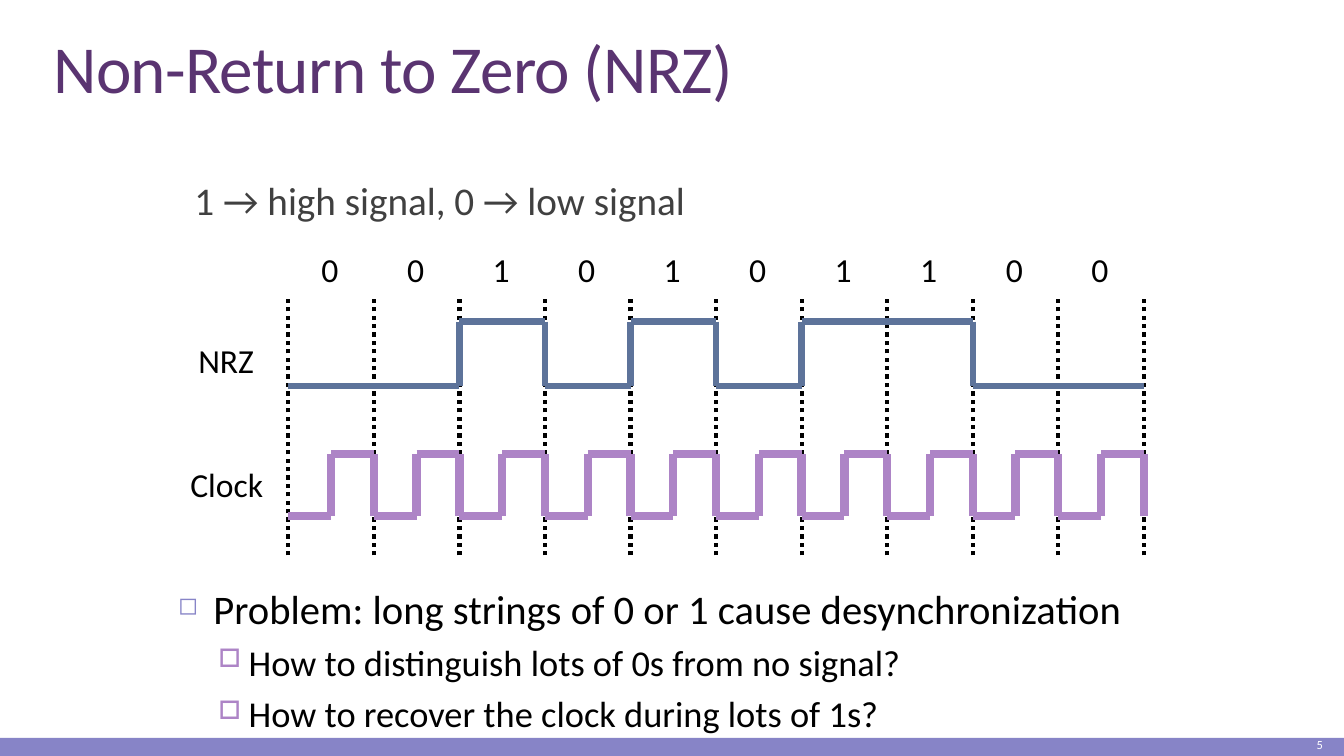
from itertools import groupby, pairwise

from pptx import Presentation
from pptx.dml.color import RGBColor
from pptx.enum import dml, shapes, text
from pptx.oxml import ns, xmlchemy
from pptx.util import Pt

FONT = "Calibri"
BLACK = RGBColor(0, 0, 0)
WHITE = RGBColor(255, 255, 255)
GRAY = RGBColor(0x40, 0x40, 0x40)
TITLE_PURPLE = RGBColor(0x5A, 0x34, 0x71)
PERIWINKLE = RGBColor(0x87, 0x84, 0xC7)
MAUVE = RGBColor(0xAD, 0x84, 0xC6)
SLATE = RGBColor(0x5D, 0x73, 0x9A)

BITS = "0010101100"
LEFT, STEP = 206, 61.1
GRID_TOP, GRID_BOTTOM = 211, 396.7
NRZ_HIGH, NRZ_LOW = 229.7, 275.8
CLOCK_HIGH, CLOCK_LOW = 324.5, 368.5

PROBLEMS = [
    (0, "Problem: long strings of 0 or 1 cause desynchronization"),
    (1, "How to distinguish lots of 0s from no signal?"),
    (1, "How to recover the clock during lots of 1s?"),
]


def add_run(p, content, size, color):
    r = p.add_run()
    r.text = content
    r.font.name = FONT
    r.font.size = Pt(size)
    r.font.color.rgb = color
    return r


def add_box(s, x, y, w, h, wrap=True):
    tf = s.shapes.add_textbox(Pt(x), Pt(y), Pt(w), Pt(h)).text_frame
    tf.word_wrap = wrap
    return tf


def add_label(s, content, x, y, w):
    tf = add_box(s, x, y, w, 36, wrap=False)
    add_run(tf.paragraphs[0], content, 24, BLACK)


def add_title(s, content):
    tf = add_box(s, 31, 22.3, 910, 57.6)
    tf.vertical_anchor = text.MSO_ANCHOR.BOTTOM
    p = tf.paragraphs[0]
    p.line_spacing = 0.85
    r = add_run(p, content, 48, TITLE_PURPLE)
    r.font._element.set("spc", "-50")


def add_rule(s, content):
    tf = add_box(s, 131.8, 126, 696, 48)
    p = tf.paragraphs[0]
    p.line_spacing = 0.9
    p.space_after = Pt(2)
    add_run(p, content, 28, GRAY)


def add_footer(s, number):
    sp = s.shapes.add_shape(shapes.MSO_SHAPE.RECTANGLE,
                            Pt(0), Pt(527), Pt(960), Pt(13))
    sp.shadow.inherit = False
    sp.fill.solid()
    sp.fill.fore_color.rgb = PERIWINKLE
    sp.line.fill.background()
    tf = add_box(s, 849, 524.2, 103, 15.8)
    tf.vertical_anchor = text.MSO_ANCHOR.MIDDLE
    p = tf.paragraphs[0]
    p.alignment = text.PP_ALIGN.RIGHT
    add_run(p, number, 8.9, WHITE)


def add_line(s, start, end, color, width):
    line = s.shapes.add_connector(shapes.MSO_CONNECTOR.STRAIGHT,
                                  *map(Pt, start + end))
    line.line.color.rgb = color
    line.line.width = Pt(width)
    xmlchemy.OxmlElement  # shared element factory
    line._element.spPr.append(xmlchemy.OxmlElement("a:effectLst"))
    return line


def add_trace(s, points, color, width):
    """Join successive points with straight lines."""
    for start, end in pairwise(points):
        add_line(s, start, end, color, width)


def edge(i):
    """Horizontal position of the start of bit i; halves are allowed."""
    return LEFT + i * STEP


def nrz_points():
    points, i = [], 0
    for bit, run in groupby(BITS):
        y = NRZ_HIGH if bit == "1" else NRZ_LOW
        n = len(list(run))
        points += [(edge(i), y), (edge(i + n), y)]
        i += n
    return points


def clock_points():
    points = [(edge(0), CLOCK_LOW)]
    for i in range(len(BITS)):
        middle, end = edge(i + 0.5), edge(i + 1)
        points += [(middle, CLOCK_LOW), (middle, CLOCK_HIGH),
                   (end, CLOCK_HIGH), (end, CLOCK_LOW)]
    return points


def set_bullet(p, char, color, percent, margin, hang):
    pPr = p._p.get_or_add_pPr()
    pPr.set("marL", str(Pt(margin)))
    pPr.set("indent", str(-Pt(hang)))
    clr = xmlchemy.OxmlElement("a:buClr")
    rgb = xmlchemy.OxmlElement("a:srgbClr")
    rgb.set("val", str(color))
    clr.append(rgb)
    size = xmlchemy.OxmlElement("a:buSzPct")
    size.set("val", str(percent * 1000))
    bullet = xmlchemy.OxmlElement("a:buChar")
    bullet.set("char", char)
    for element in (clr, size, bullet):
        pPr.append(element)


def add_problems(s):
    tf = add_box(s, 120.2, 413.3, 720, 126.7)
    for i, (level, content) in enumerate(PROBLEMS):
        p = tf.add_paragraph() if i else tf.paragraphs[0]
        p.level = level
        if i:
            p.space_before = Pt(5.5)
        if level:
            set_bullet(p, "□", MAUVE, 70, 50.4, 21.6)
        else:
            set_bullet(p, "◻", PERIWINKLE, 60, 25.2, 25.2)
        add_run(p, content, 26 if level else 29, BLACK)


def main():
    prs = Presentation()
    prs.slide_width, prs.slide_height = Pt(960), Pt(540)
    s = prs.slides.add_slide(prs.slide_layouts[6])
    add_footer(s, "5")
    add_title(s, "Non-Return to Zero (NRZ)")
    add_rule(s, "1 → high signal, 0 → low signal")
    for i in range(len(BITS) + 1):
        line = add_line(s, (edge(i), GRID_BOTTOM), (edge(i), GRID_TOP), BLACK, 3)
        line.line.dash_style = dml.MSO_LINE.ROUND_DOT
    add_trace(s, clock_points(), MAUVE, 6)
    add_label(s, "Clock", 128.9, 327.6, 67)
    add_label(s, "NRZ", 134.6, 239, 54.7)
    add_trace(s, nrz_points(), SLATE, 4.5)
    for i, bit in enumerate(BITS):
        add_label(s, bit, edge(i + 0.5) - 14, 174.2, 28)
    add_problems(s)
    prs.save("out.pptx")


if __name__ == "__main__":
    main()
